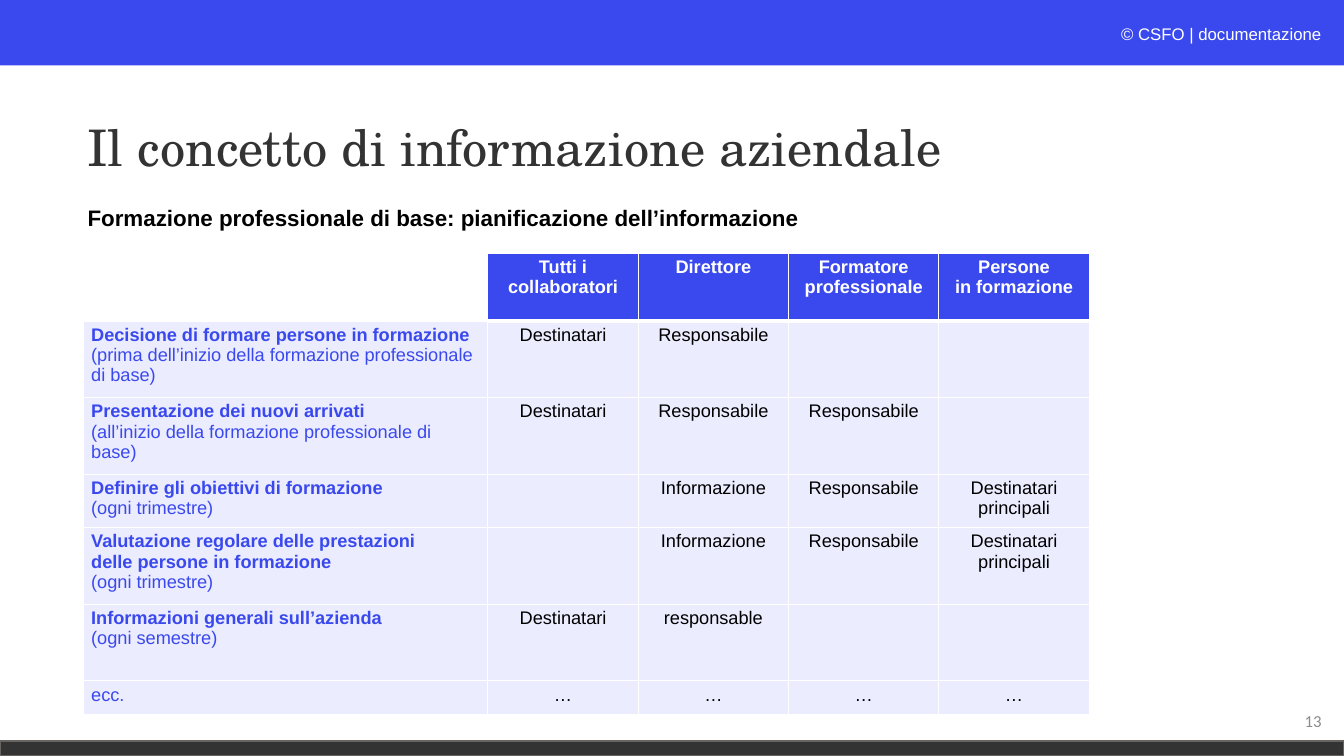
from lxml import etree
from pptx import Presentation
from pptx.dml.color import RGBColor
from pptx.enum.shapes import MSO_SHAPE
from pptx.enum.text import MSO_ANCHOR, PP_ALIGN
from pptx.oxml.ns import qn
from pptx.util import Pt

RECT = MSO_SHAPE.RECTANGLE
TOP, MIDDLE = MSO_ANCHOR.TOP, MSO_ANCHOR.MIDDLE
LEFT, CENTER, RIGHT = PP_ALIGN.LEFT, PP_ALIGN.CENTER, PP_ALIGN.RIGHT

THEME = {
    "blue": "3A49EE", "pale": "EBECFE", "dark": "333333", "edge": "666360",
    "white": "FFFFFF", "black": "000000", "gray": "8C8C8C",
    "body": "Arial", "serif": "TeX Gyre Schola", "number": "Calibri",
    "title_size": 36, "subtitle_size": 16, "cell_size": 13, "small_size": 12,
}

TITLE = "Il concetto di informazione aziendale"
SUBTITLE = "Formazione professionale di base: pianificazione dell’informazione"
COPYRIGHT = [("© ", {"italic": True}), ("CSFO | documentazione", {})]
PAGE = "13"

HEADERS = [["Tutti i", "collaboratori"], ["Direttore"],
           ["Formatore", "professionale"], ["Persone", "in formazione"]]
MAIN_RECIPIENTS = ["Destinatari", "principali"]
# Each row: height, bold lines, plain line, then the four role cells
ROWS = [
    (54.72, ["Decisione di formare persone in formazione"],
     "(prima dell’inizio della formazione professionale di base)",
     [["Destinatari"], ["Responsabile"], [], []]),
    (54.72, ["Presentazione dei nuovi arrivati"],
     "(all’inizio della formazione professionale di base)",
     [["Destinatari"], ["Responsabile"], ["Responsabile"], []]),
    (38.16, ["Definire gli obiettivi di formazione"], "(ogni trimestre)",
     [[], ["Informazione"], ["Responsabile"], MAIN_RECIPIENTS]),
    (54.72, ["Valutazione regolare delle prestazioni",
             "delle persone in formazione"], "(ogni trimestre)",
     [[], ["Informazione"], ["Responsabile"], MAIN_RECIPIENTS]),
    (54.72, ["Informazioni generali sull’azienda"], "(ogni semestre)",
     [["Destinatari"], ["responsable"], [], []]),
    (24.48, [], "ecc.", [["…"]] * 4),
]
HEADER_HEIGHT = 48.6
TOPIC_WIDTH, ROLE_WIDTH = 288.72, 107.4


def rgb(name):
    return RGBColor.from_string(THEME[name])


def write(tf, paragraphs, size="cell_size", font="body", color="black",
          bold=False, align=LEFT, spacing=None):
    """Fill a text frame; a paragraph is a string or a list of (text, overrides)."""
    for i, runs in enumerate(paragraphs):
        p = tf.paragraphs[0] if i == 0 else tf.add_paragraph()
        p.alignment = align
        if spacing:
            p.line_spacing = spacing
        for text, over in [(runs, {})] if isinstance(runs, str) else runs:
            r = p.add_run()
            r.text = text
            r.font.size, r.font.name = Pt(THEME[size]), THEME[font]
            r.font.color.rgb = rgb(color)
            r.font.bold = over.get("bold", bold)
            r.font.italic = over.get("italic", False)


def add_text(s, box, paragraphs, anchor=TOP, wrap=True, **fmt):
    tf = s.shapes.add_textbox(*map(Pt, box)).text_frame
    tf.word_wrap, tf.vertical_anchor = wrap, anchor
    write(tf, paragraphs, **fmt)


def add_bar(s, box, fill, line=None):
    sp = s.shapes.add_shape(RECT, *map(Pt, box))
    sp.shadow.inherit = False
    sp.fill.solid()
    sp.fill.fore_color.rgb = rgb(fill)
    if line:
        sp.line.color.rgb, sp.line.width = rgb(line), Pt(1)
    else:
        sp.line.fill.background()


def set_borders(cell, bottom):
    tc_pr = cell._tc.get_or_add_tcPr()
    for i, (side, width) in enumerate(zip("LRTB", (1, 1, 1, bottom))):
        ln = etree.Element(qn(f"a:ln{side}"), w=str(Pt(width)))
        fill = etree.SubElement(ln, qn("a:solidFill"))
        etree.SubElement(fill, qn("a:srgbClr"), val=THEME["white"])
        tc_pr.insert(i, ln)


def fill_cell(cell, paragraphs, fill=None, bottom=1, **fmt):
    cell.margin_left = cell.margin_right = Pt(5.4)
    cell.margin_top = cell.margin_bottom = Pt(2.7)
    if fill:
        cell.fill.solid()
        cell.fill.fore_color.rgb = rgb(fill)
    else:
        cell.fill.background()
    set_borders(cell, bottom)
    write(cell.text_frame, paragraphs, **fmt)
    if not paragraphs:
        cell.text_frame.paragraphs[0].font.size = Pt(THEME["cell_size"])


def add_plan(s, left, top):
    heights = [HEADER_HEIGHT] + [row[0] for row in ROWS]
    widths = [TOPIC_WIDTH] + [ROLE_WIDTH] * len(HEADERS)
    table = s.shapes.add_table(len(heights), len(widths), Pt(left), Pt(top),
                               Pt(sum(widths)), Pt(sum(heights))).table
    table.horz_banding = table.first_row = False
    for column, width in zip(table.columns, widths):
        column.width = Pt(width)
    for row, height in zip(table.rows, heights):
        row.height = Pt(height)
    fill_cell(table.cell(0, 0), [])
    for c, lines in enumerate(HEADERS, 1):
        fill_cell(table.cell(0, c), lines, fill="blue", bottom=3,
                  color="white", bold=True, align=CENTER)
    for r, (_, topic, timing, roles) in enumerate(ROWS, 1):
        label = [[(line, {"bold": True})] for line in topic] + [timing]
        fill_cell(table.cell(r, 0), label, fill="pale", color="blue")
        for c, lines in enumerate(roles, 1):
            fill_cell(table.cell(r, c), lines, fill="pale", align=CENTER)


def main():
    prs = Presentation()
    prs.slide_width, prs.slide_height = Pt(960), Pt(540)
    s = prs.slides.add_slide(prs.slide_layouts[6])
    add_bar(s, (0, 0, 960, 46.8), "blue")
    add_bar(s, (0, 529.2, 960, 10.8), "dark", line="edge")
    add_text(s, (620.64, 13.68, 330.48, 21.6), [COPYRIGHT],
             size="small_size", color="white", align=RIGHT)
    add_text(s, (735.12, 500.4, 216, 28.8), [PAGE], anchor=MIDDLE,
             size="small_size", font="number", color="gray", align=RIGHT)
    add_text(s, (55.44, 54.72, 828, 104.4), [TITLE], anchor=MIDDLE,
             size="title_size", font="serif", color="dark", spacing=0.9)
    add_plan(s, 59.76, 180.72)
    add_text(s, (55.44, 142.56, 529.2, 26.64), [SUBTITLE], wrap=False,
             size="subtitle_size", bold=True)
    prs.save("out.pptx")


if __name__ == "__main__":
    main()
